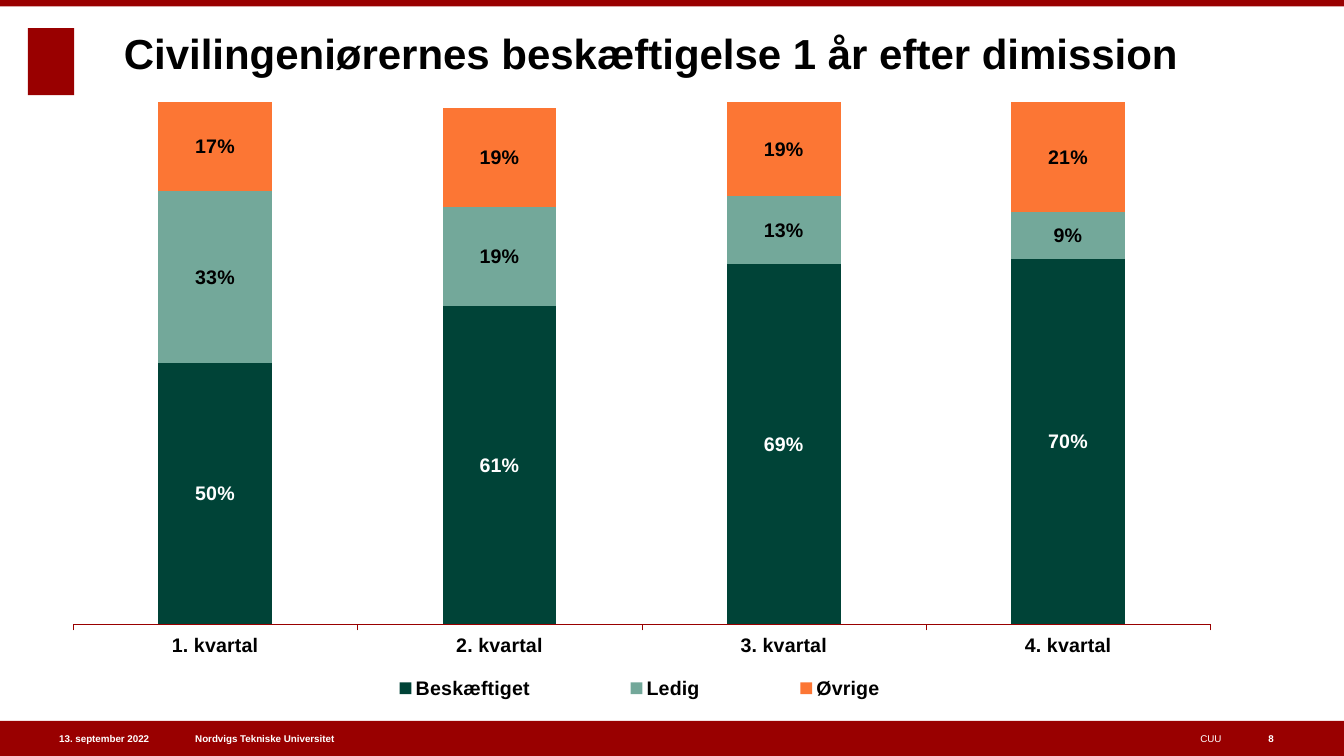
from dataclasses import dataclass

from lxml import etree
from pptx import Presentation
from pptx.chart.data import CategoryChartData
from pptx.dml.color import RGBColor
from pptx.enum.chart import XL_CHART_TYPE as ChartType
from pptx.enum.chart import XL_LABEL_POSITION as LabelPosition
from pptx.enum.chart import XL_LEGEND_POSITION as LegendPosition
from pptx.enum.chart import XL_TICK_LABEL_POSITION as TickLabels
from pptx.enum.chart import XL_TICK_MARK as TickMark
from pptx.enum.shapes import MSO_SHAPE as Shape
from pptx.enum.text import MSO_ANCHOR as Anchor
from pptx.enum.text import MSO_AUTO_SIZE as AutoSize
from pptx.enum.text import PP_ALIGN as Align
from pptx.oxml.ns import qn
from pptx.util import Pt


@dataclass(frozen=True)
class Theme:
    font: str = "Arial"
    red: RGBColor = RGBColor(0x99, 0x00, 0x00)
    black: RGBColor = RGBColor(0x00, 0x00, 0x00)
    white: RGBColor = RGBColor(0xFF, 0xFF, 0xFF)
    dark_green: RGBColor = RGBColor(0x00, 0x43, 0x37)
    light_green: RGBColor = RGBColor(0x73, 0xA8, 0x9A)
    orange: RGBColor = RGBColor(0xFC, 0x76, 0x34)
    title_size: float = 30
    chart_size: float = 14
    footer_size: float = 7


THEME = Theme()
SLIDE_WIDTH, SLIDE_HEIGHT = 960, 540
FOOTER_HEIGHT = 25

QUARTERS = [f"{number}. kvartal" for number in range(1, 5)]
SERIES = [  # name, shares, fill, label colour
    ("Beskæftiget", (0.50, 0.61, 0.69, 0.70), THEME.dark_green, THEME.white),
    ("Ledig", (0.33, 0.19, 0.13, 0.09), THEME.light_green, THEME.black),
    ("Øvrige", (0.17, 0.19, 0.19, 0.21), THEME.orange, THEME.black),
]


def style_font(font, size, color, bold=True):
    font.name = THEME.font
    font.size = Pt(size)
    font.bold = bold
    font.color.rgb = color


def clear_margins(frame):
    frame.margin_left = frame.margin_right = 0
    frame.margin_top = frame.margin_bottom = 0


def add_block(slide, left, top, width, height):
    block = slide.shapes.add_shape(
        Shape.RECTANGLE, Pt(left), Pt(top), Pt(width), Pt(height))
    block.shadow.inherit = False
    block.fill.solid()
    block.fill.fore_color.rgb = THEME.red
    block.line.fill.background()


def add_header(slide, left, top, width):
    # Top rule and plain emblem
    add_block(slide, left, top, width, 4.5)
    add_block(slide, left + 20, top + 20, 33, 48)


def add_footer(slide, left, top, width, height):
    add_block(slide, left, top, width, height)
    items = [  # text, offset, width, alignment, bold
        ("13. september 2022", 19.5, 87, Align.RIGHT, True),
        ("Nordvigs Tekniske Universitet", 139.5, 268, Align.LEFT, True),
        ("CUU", 440, 432.5, Align.RIGHT, False),
        ("8", 906, 34, Align.LEFT, True),
    ]
    for text, offset, item_width, alignment, bold in items:
        box = slide.shapes.add_textbox(
            Pt(left + offset), Pt(top), Pt(item_width), Pt(height))
        frame = box.text_frame
        frame.word_wrap = True
        frame.vertical_anchor = Anchor.MIDDLE
        clear_margins(frame)
        paragraph = frame.paragraphs[0]
        paragraph.text = text
        paragraph.alignment = alignment
        style_font(paragraph.font, THEME.footer_size, THEME.white, bold)


def place_title(slide, left, top, width, height):
    title = slide.shapes.title
    title.left, title.top = Pt(left), Pt(top)
    title.width, title.height = Pt(width), Pt(height)
    frame = title.text_frame
    frame.word_wrap = True
    frame.auto_size = AutoSize.NONE
    frame.vertical_anchor = Anchor.TOP
    clear_margins(frame)
    frame.margin_top = Pt(7)
    paragraph = frame.paragraphs[0]
    paragraph.text = "Civilingeniørernes beskæftigelse 1 år efter dimission"
    paragraph.alignment = Align.LEFT
    style_font(paragraph.font, THEME.title_size, THEME.black)


def make_layout(x, y, width, height, inner=False):
    layout = etree.Element(qn("c:layout"))
    manual = etree.SubElement(layout, qn("c:manualLayout"))
    settings = [("layoutTarget", "inner")] if inner else []
    settings += [("xMode", "edge"), ("yMode", "edge"),
                 ("x", x), ("y", y), ("w", width), ("h", height)]
    for tag, value in settings:
        etree.SubElement(manual, qn(f"c:{tag}")).set("val", str(value))
    return layout


def set_plot_layout(chart):
    plot_area = chart.element.find(f".//{qn('c:plotArea')}")
    for old_layout in plot_area.findall(qn("c:layout")):
        plot_area.remove(old_layout)
    plot_area.insert(0, make_layout(0.042, 0.065, 0.919, 0.802, inner=True))


def set_legend_layout(chart):
    legend = chart.element.find(f".//{qn('c:legend')}")
    for old_layout in legend.findall(qn("c:layout")):
        legend.remove(old_layout)
    legend.find(qn("c:legendPos")).addnext(make_layout(0.23, 0.94, 0.54, 0.05))


def add_employment_chart(slide, left, top, width, height):
    data = CategoryChartData(number_format="0%")
    data.categories = QUARTERS
    for name, shares, _, _ in SERIES:
        data.add_series(name, shares)
    chart = slide.shapes.add_chart(
        ChartType.COLUMN_STACKED, Pt(left), Pt(top), Pt(width), Pt(height),
        data).chart
    chart.has_title = False
    style_font(chart.font, THEME.chart_size, THEME.black)

    # Axes
    category_axis = chart.category_axis
    category_axis.major_tick_mark = TickMark.OUTSIDE
    category_axis.format.line.width = Pt(0.1)
    category_axis.format.line.color.rgb = THEME.red
    style_font(category_axis.tick_labels.font, THEME.chart_size, THEME.black)
    value_axis = chart.value_axis
    value_axis.minimum_scale, value_axis.maximum_scale = 0, 1
    value_axis.major_unit = 0.5
    value_axis.has_major_gridlines = False
    value_axis.tick_label_position = TickLabels.NONE
    value_axis.visible = False

    # Columns and their labels
    plot = chart.plots[0]
    plot.gap_width, plot.overlap = 150, 100
    plot.vary_by_categories = False
    for series, (_, _, fill, label_color) in zip(plot.series, SERIES):
        series.format.fill.solid()
        series.format.fill.fore_color.rgb = fill
        labels = series.data_labels
        labels.show_value = True
        labels.position = LabelPosition.CENTER
        labels.number_format = "0%"
        labels.number_format_is_linked = False
        style_font(labels.font, THEME.chart_size, label_color)

    # Legend and plot position
    chart.has_legend = True
    chart.legend.position = LegendPosition.BOTTOM
    chart.legend.include_in_layout = False
    style_font(chart.legend.font, THEME.chart_size, THEME.black)
    set_legend_layout(chart)
    set_plot_layout(chart)


def main():
    presentation = Presentation()
    presentation.slide_width = Pt(SLIDE_WIDTH)
    presentation.slide_height = Pt(SLIDE_HEIGHT)
    slide = presentation.slides.add_slide(presentation.slide_layouts[5])
    add_header(slide, 0, 0, SLIDE_WIDTH)
    add_footer(slide, 0, SLIDE_HEIGHT - FOOTER_HEIGHT, SLIDE_WIDTH, FOOTER_HEIGHT)
    place_title(slide, 88.5, 12.5, 782.5, 76)
    add_employment_chart(slide, 15, 43, 884, 465)
    presentation.save("out.pptx")


if __name__ == "__main__":
    main()
